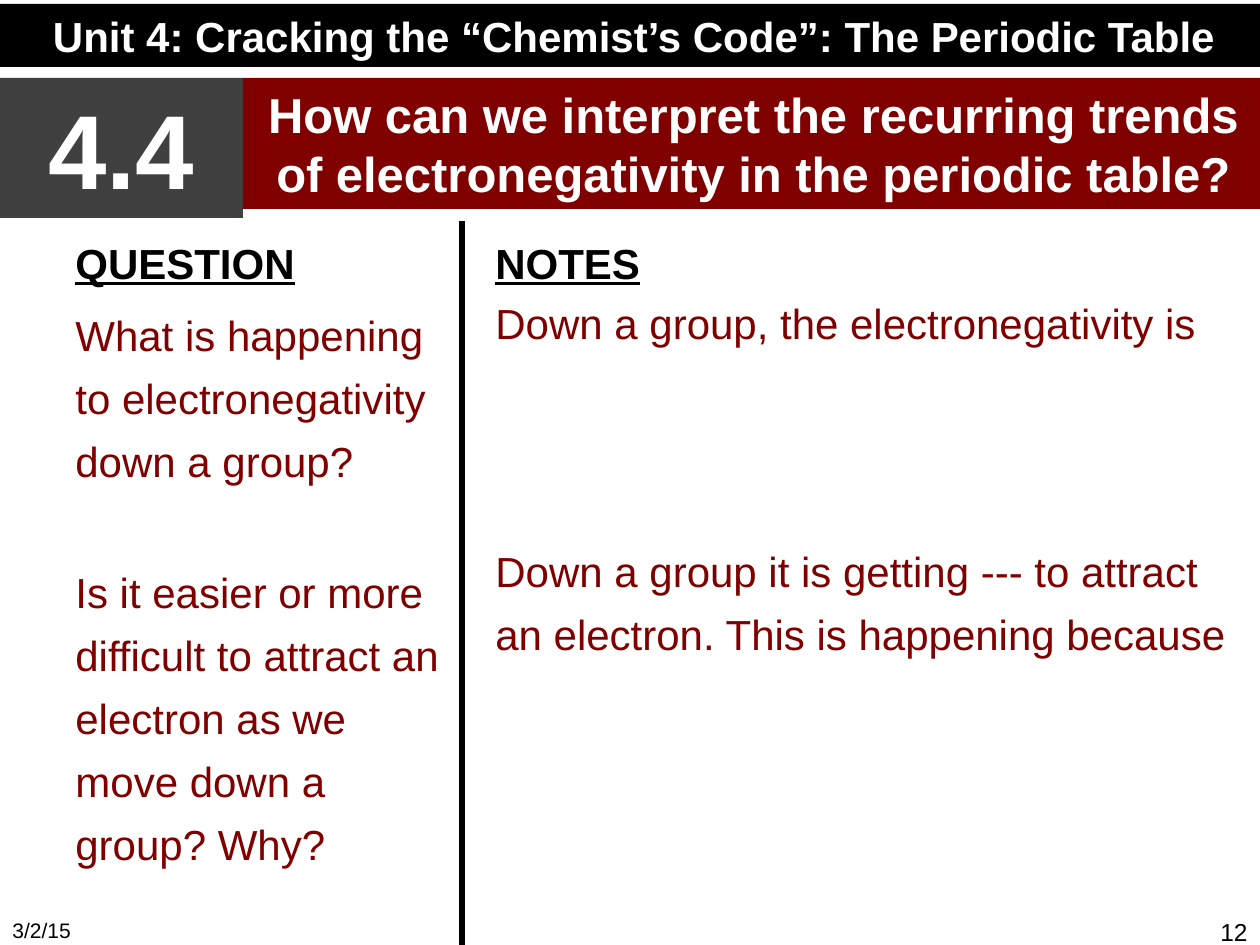
from pptx import Presentation
from pptx import util as u
from pptx.dml.color import RGBColor
from pptx.enum import shapes, text
from pptx.oxml.ns import qn
from lxml import etree

PX = 914400 // 126
COLORS = {"black": "000000", "white": "FFFFFF", "gray": "404040", "maroon": "800000"}


def px(n):
    return u.Emu(n * PX)


def rgb(name):
    return RGBColor.from_string(COLORS[name])


def add_run(p, words, size, color, bold=False, underline=False):
    r = p.add_run()
    r.text = words
    r.font.name = "Arial"
    r.font.size = u.Pt(size)
    r.font.bold = bold
    r.font.underline = underline
    r.font.color.rgb = rgb(color)


def add_box(s, x, y, w, h):
    tf = s.shapes.add_textbox(px(x), px(y), px(w), px(h)).text_frame
    tf.word_wrap = True
    return tf


def add_footer(s, x, words, size, align):
    p = add_box(s, x, 911, 294, 34).paragraphs[0]
    p.alignment = align
    add_run(p, words, size, "black")


def add_banner(s, x, y, w, h, words, size, fill):
    sp = s.shapes.add_shape(shapes.MSO_SHAPE.RECTANGLE, px(x), px(y), px(w), px(h))
    sp.shadow.inherit = False
    sp.fill.solid()
    sp.fill.fore_color.rgb = rgb(fill)
    sp.line.fill.background()
    tf = sp.text_frame
    tf.word_wrap = True
    tf.vertical_anchor = text.MSO_ANCHOR.MIDDLE
    p = tf.paragraphs[0]
    p.alignment = text.PP_ALIGN.CENTER
    add_run(p, words, size, fill and "white", bold=True)


def add_column(s, x, w, heading, entries):
    tf = add_box(s, x, 227, w, 624)
    tf.margin_top = px(10)
    add_run(tf.paragraphs[0], heading, 24, "black", bold=True, underline=True)
    for words, spacing, before in entries:
        p = tf.add_paragraph()
        p.line_spacing = spacing
        p.space_before = u.Pt(before)
        add_run(p, words, 24, "maroon")


def add_divider(s, x, top, bottom):
    line = s.shapes.add_connector(shapes.MSO_CONNECTOR.STRAIGHT, px(x), px(top), px(x), px(bottom))
    line.line.color.rgb = rgb("black")
    line.line.width = u.Pt(3)
    etree.SubElement(line._element.spPr, qn("a:effectLst"))


def main():
    prs = Presentation()
    prs.slide_width, prs.slide_height = u.Inches(10), u.Inches(7.5)
    s = prs.slides.add_slide(prs.slide_layouts[6])
    add_footer(s, 0, "3/2/15", 12, text.PP_ALIGN.LEFT)
    add_footer(s, 966, "12", 14, text.PP_ALIGN.RIGHT)
    add_column(s, 63, 399, "QUESTION", [
        ("What is happening to electronegativity down a group?", 1.25, 5.5),
        ("Is it easier or more difficult to attract an electron as we move down a group? Why?", 1.25, 38.6),
    ])
    add_banner(s, 0, 4, 1268, 63, "Unit 4: Cracking the “Chemist’s Code”: The Periodic Table", 24, "black")
    add_banner(s, 0, 78, 243, 140, "4.4", 60, "gray")
    add_banner(s, 243, 78, 1021, 131,
               "How can we interpret the recurring trends of electronegativity in the periodic table?", 28, "maroon")
    add_divider(s, 462, 221, 945)
    add_column(s, 483, 777, "NOTES", [
        ("Down a group, the electronegativity is", 1.0, 5.5),
        ("Down a group it is getting --- to attract an electron. This is happening because", 1.25, 106),
    ])
    prs.save("out.pptx")


if __name__ == "__main__":
    main()
